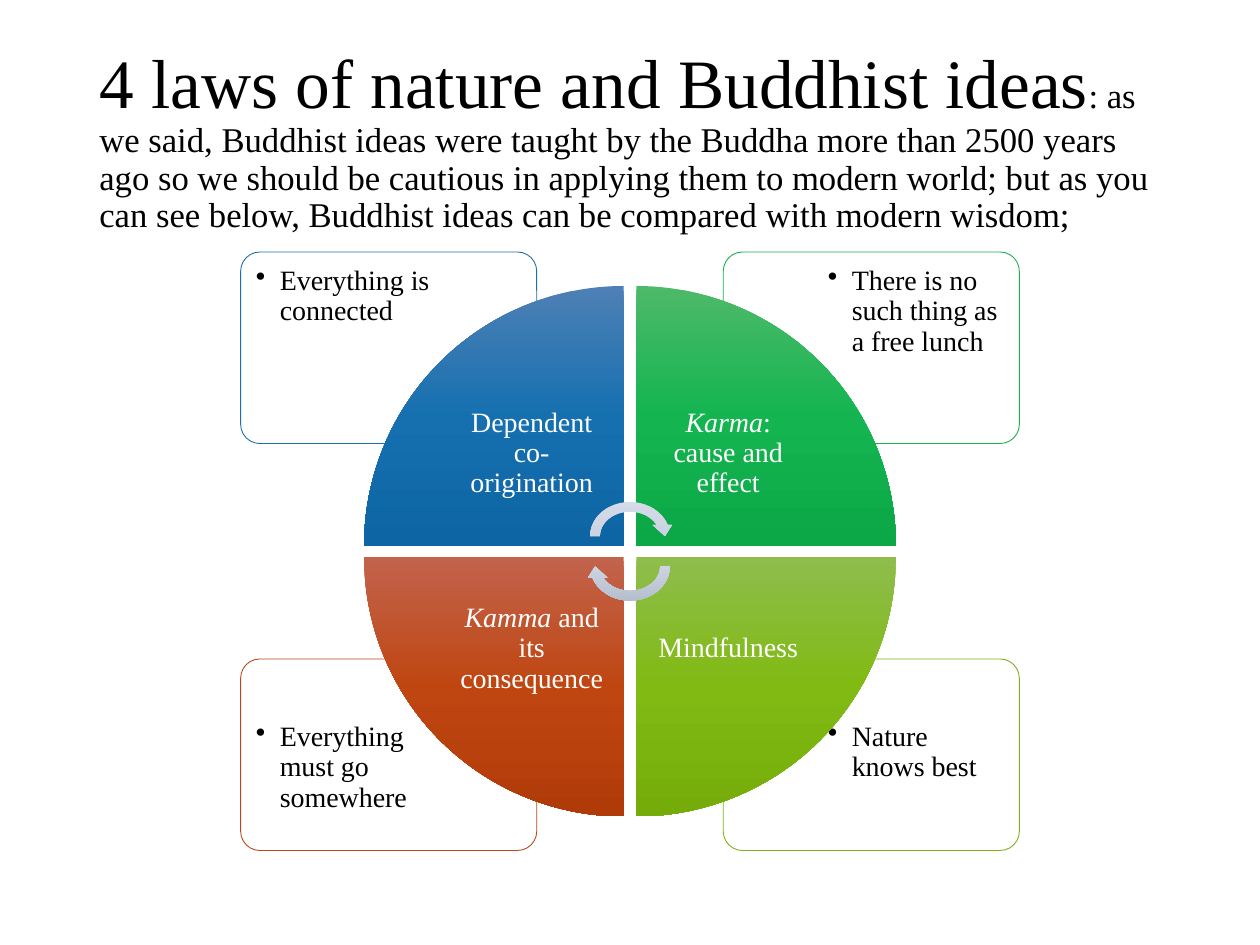
from lxml import etree
from pptx import Presentation
from pptx import util as u
from pptx.dml.color import RGBColor
from pptx.enum import shapes, text
from pptx.oxml import ns

THEME = {
    "font": "Times New Roman",
    "ink": "000000",
    "paper": "FFFFFF",
    "heading": 39.6,
    "intro": 19.8,
    "body": 16,
    "arrow": ("D5DCE7", "CCD4E3", "B3BCCB"),
}

# Clockwise from top left: side, level, outline, gradient, label runs (text, italic), card text
LAWS = [
    (-1, -1, "1D6FA9", ("4E80B5", "1670B0", "0D65A3"),
     [("Dependent co-origination", False)], "Everything is connected"),
    (1, -1, "1CAE53", ("4EB96A", "14B551", "0CA746"),
     [("Karma", True), (": cause and effect", False)],
     "There is no such thing as a free lunch"),
    (1, 1, "7FB21A", ("8EBD4D", "81BA13", "75AC0A"),
     [("Mindfulness", False)], "Nature knows best"),
    (-1, 1, "B74919", ("C2634D", "BF4611", "B13B08"),
     [("Kamma", True), (" and its consequence", False)], "Everything must go somewhere"),
]

deck = Presentation()
deck.slide_width, deck.slide_height = u.Inches(10), u.Inches(7.5)
slide = deck.slides.add_slide(deck.slide_layouts[6])
COL, ROW = deck.slide_width / 100, deck.slide_height / 75
MID_COL, MID_ROW = 50, 43.75


def place(side, level, gap_cols, gap_rows, cols, rows):
    """Box in the quadrant (side, level), its inner corner set off from the wheel's centre."""
    left = MID_COL + (gap_cols if side > 0 else -gap_cols - cols)
    top = MID_ROW + (gap_rows if level > 0 else -gap_rows - rows)
    return [round(v) for v in (left * COL, top * ROW, cols * COL, rows * ROW)]


def write(box, runs, color, inset_cols=None):
    """Fill a text box with one paragraph of (text, size, italic) runs."""
    frame = box.text_frame
    frame.word_wrap = True
    if inset_cols is not None:
        inset = round(inset_cols * COL)
        frame.margin_left = frame.margin_right = inset
        frame.margin_top = frame.margin_bottom = inset
    paragraph = frame.paragraphs[0]
    paragraph.line_spacing = 0.9
    for words, size, italic in runs:
        run = paragraph.add_run()
        run.text = words
        run.font.name = THEME["font"]
        run.font.size = u.Pt(size)
        run.font.italic = italic
        run.font.color.rgb = RGBColor.from_string(color)
    return frame, paragraph


title = slide.shapes.add_textbox(*[round(v) for v in (6.9 * COL, 4 * ROW, 86.2 * COL, 14.5 * ROW)])
title_frame, _ = write(title, [
    ("4 laws of nature and Buddhist ideas", THEME["heading"], False),
    (": as we said, Buddhist ideas were taught by the Buddha more than 2500 years ago "
     "so we should be cautious in applying them to modern world; but as you can see below, "
     "Buddhist ideas can be compared with modern wisdom;", THEME["intro"], False),
], THEME["ink"])
title_frame.vertical_anchor = text.MSO_ANCHOR.MIDDLE

# Corner cards
for side, level, outline, _, _, saying in LAWS:
    card = slide.shapes.add_shape(shapes.MSO_SHAPE.ROUNDED_RECTANGLE,
                                  *place(side, level, 7.4, 8.55, 23.5, 15.2))
    card.adjustments[0] = 0.1
    card.shadow.inherit = False
    card.fill.solid()
    card.fill.fore_color.rgb = RGBColor.from_string(THEME["paper"])
    tint = card.fill._xPr.find(ns.qn("a:solidFill"))[0]
    etree.SubElement(tint, ns.qn("a:alpha"), val="90000")
    card.line.color.rgb = RGBColor.from_string(outline)
    card.line.width = u.Pt(0.5)

    saying_box = slide.shapes.add_textbox(*place(side, level, 14.8, 12.7, 15.8, 10.8))
    _, bullet = write(saying_box, [(saying, THEME["body"], False)], THEME["ink"], 0.9)
    indent = round(1.9 * COL)
    properties = bullet._p.get_or_add_pPr()
    properties.set("marL", str(indent))
    properties.set("indent", str(-indent))
    etree.SubElement(properties, ns.qn("a:buChar"), char="•")

# Wheel: four wedges with labels, then two arrows around the hub
gradient_parts = []
for turn, (side, level, _, gradient, label, _) in enumerate(LAWS):
    wedge = slide.shapes.add_shape(shapes.MSO_SHAPE.PIE_WEDGE,
                                   *place(side, level, 0.5, 0.45, 20.6, 20.6))
    wedge.rotation = 90 * turn
    gradient_parts.append((wedge, gradient))
    label_box = slide.shapes.add_textbox(*place(side, level, 0.5, 0.45, 14.6, 14.6))
    runs = [(words, THEME["body"], italic) for words, italic in label]
    label_frame, caption = write(label_box, runs, THEME["paper"], 1.2)
    label_frame.vertical_anchor = text.MSO_ANCHOR.MIDDLE
    caption.alignment = text.PP_ALIGN.CENTER

for level, angle in ((-1, 0), (1, 180)):
    arrow_box = (MID_COL - 3.55) * COL, (MID_ROW + 1.2 * level - 3.1) * ROW, 7.1 * COL, 6.2 * ROW
    arrow = slide.shapes.add_shape(shapes.MSO_SHAPE.CIRCULAR_ARROW, *[round(v) for v in arrow_box])
    arrow.rotation = angle
    gradient_parts.append((arrow, THEME["arrow"]))

# Gradients run down the page whatever the shape's rotation
for part, colors in gradient_parts:
    part.shadow.inherit = False
    part.line.fill.background()
    part.fill.gradient()
    gradient_fill = part.fill._xPr.find(ns.qn("a:gradFill"))
    gradient_fill.set("rotWithShape", "0")
    stops = gradient_fill.find(ns.qn("a:gsLst"))
    stops.clear()
    for position, color in zip((0, 50000, 100000), colors):
        stop = etree.SubElement(stops, ns.qn("a:gs"), pos=str(position))
        etree.SubElement(stop, ns.qn("a:srgbClr"), val=color)
    direction = gradient_fill.find(ns.qn("a:lin"))
    direction.set("ang", "5400000")
    direction.set("scaled", "0")

deck.save("out.pptx")
